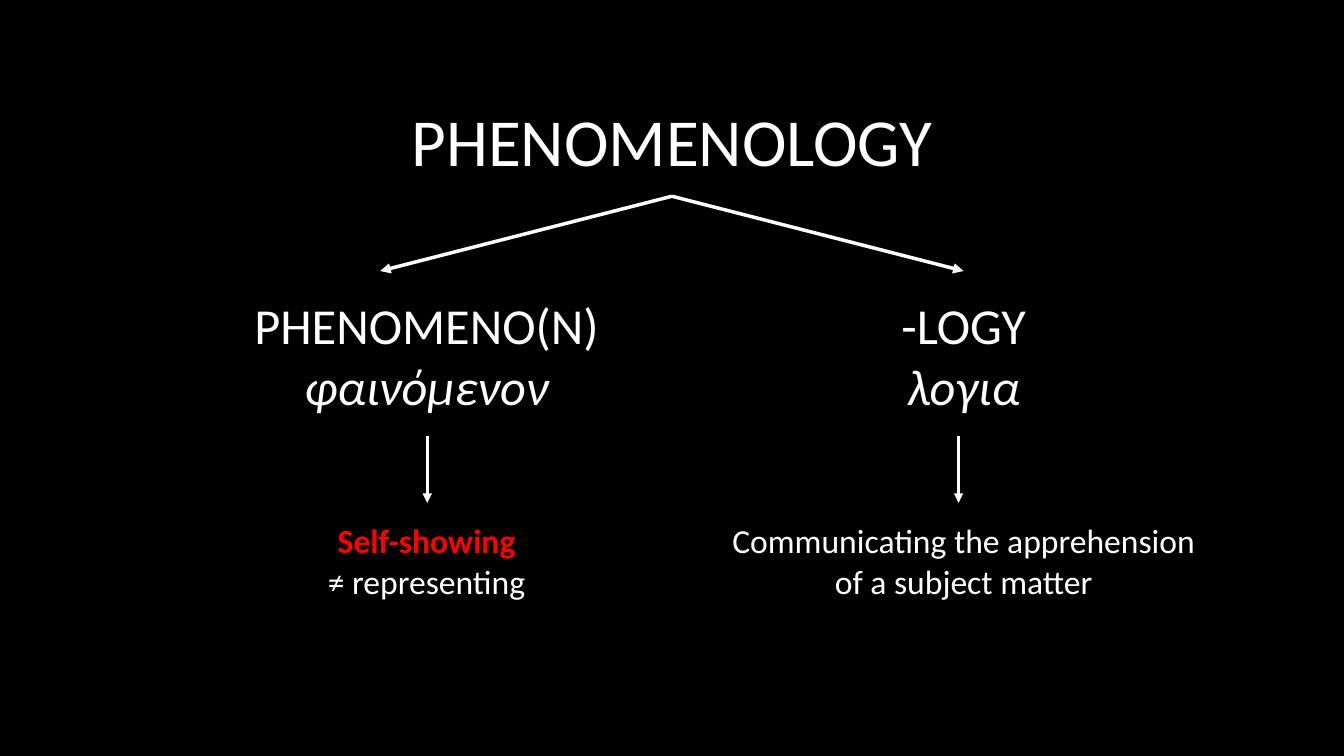
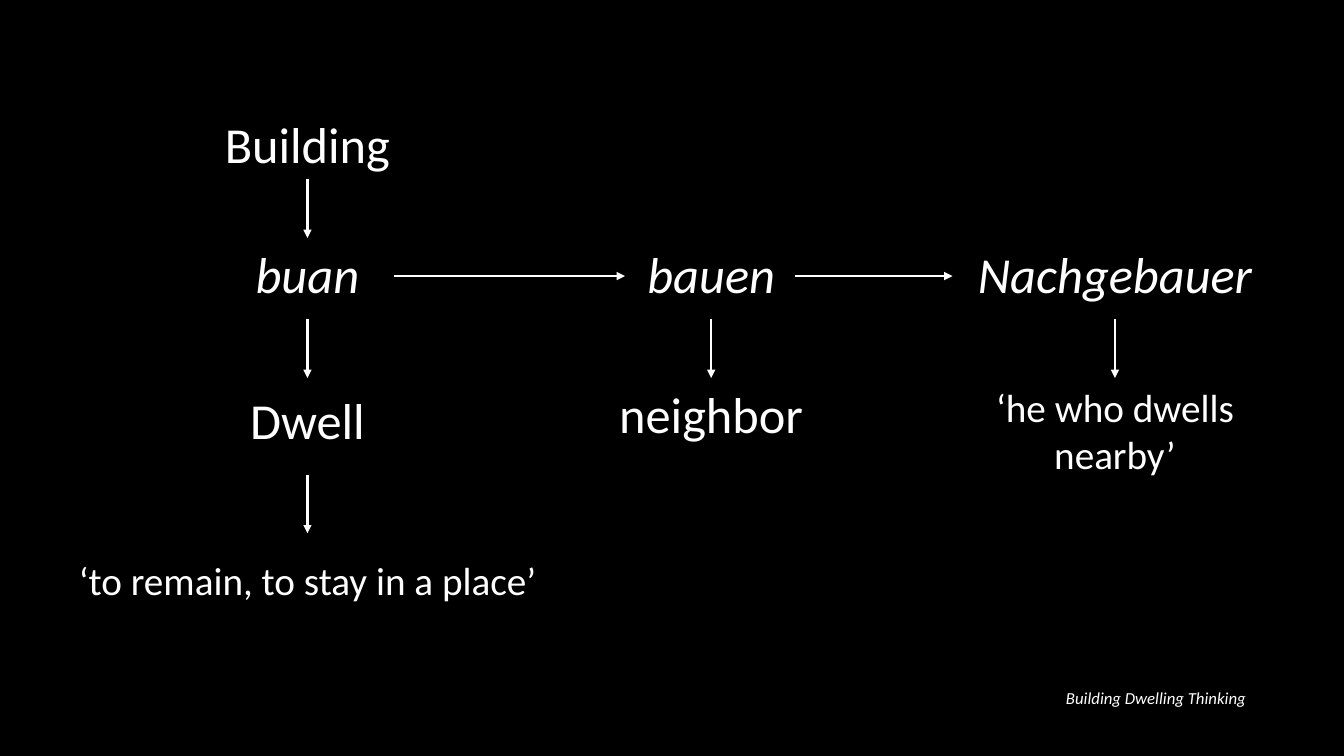
from dataclasses import dataclass

from lxml import etree
from pptx import Presentation
from pptx.dml.color import RGBColor
from pptx.enum.shapes import MSO_CONNECTOR
from pptx.enum.text import MSO_ANCHOR, MSO_AUTO_SIZE, PP_ALIGN
from pptx.oxml.ns import qn
from pptx.shapes.autoshape import Shape
from pptx.slide import Slide
from pptx.util import Pt

STRAIGHT = MSO_CONNECTOR.STRAIGHT
TOP_ANCHOR = MSO_ANCHOR.TOP
FIT_SHAPE = MSO_AUTO_SIZE.SHAPE_TO_FIT_TEXT
CENTER, RIGHT = PP_ALIGN.CENTER, PP_ALIGN.RIGHT
TOP_SIDE, BOTTOM_SIDE = 0, 2
TITLE_ONLY_LAYOUT = 5


@dataclass(frozen=True)
class Theme:
    background: RGBColor = RGBColor(0x00, 0x00, 0x00)
    foreground: RGBColor = RGBColor(0xFF, 0xFF, 0xFF)
    accent: RGBColor = RGBColor(0xFF, 0x00, 0x00)
    font: str = "Calibri"
    title: int = 48
    term: int = 36
    meaning: int = 28
    gloss: int = 24
    source: int = 12


THEME = Theme()


@dataclass(frozen=True)
class Line:
    text: str
    italic: bool = False
    bold: bool = False
    color: RGBColor = THEME.foreground


@dataclass(frozen=True)
class Label:
    """Text box placed by its horizontal centre; lengths in points."""
    name: str
    center: float
    top: float
    width: float
    height: float
    size: int
    lines: tuple[Line, ...]
    alignment: PP_ALIGN = CENTER
    wrap: bool = True
    is_title: bool = False


@dataclass(frozen=True)
class Arrow:
    """Arrow in points, optionally joined to labels by name."""
    start: tuple[float, float]
    end: tuple[float, float]
    weight: float
    from_label: str = ""
    to_label: str = ""


# Shared drawing functions
def draw_label(slide: Slide, label: Label) -> Shape:
    box = (Pt(label.center - label.width / 2), Pt(label.top),
           Pt(label.width), Pt(label.height))
    if label.is_title:
        shape = slide.shapes.title
        shape.left, shape.top, shape.width, shape.height = box
    else:
        shape = slide.shapes.add_textbox(*box)
    frame = shape.text_frame
    frame.word_wrap = label.wrap
    frame.auto_size = FIT_SHAPE
    frame.vertical_anchor = TOP_ANCHOR
    for index, line in enumerate(label.lines):
        paragraph = frame.add_paragraph() if index else frame.paragraphs[0]
        paragraph.text = line.text
        paragraph.alignment = label.alignment
        font = paragraph.font
        font.name, font.size = THEME.font, Pt(label.size)
        font.italic, font.bold = line.italic, line.bold
        font.color.rgb = line.color
    return shape


def draw_arrow(slide: Slide, arrow: Arrow, shapes: dict[str, Shape]) -> None:
    connector = slide.shapes.add_connector(
        STRAIGHT, *(Pt(value) for value in arrow.start + arrow.end))
    if arrow.from_label:
        connector.begin_connect(shapes[arrow.from_label], BOTTOM_SIDE)
    if arrow.to_label:
        connector.end_connect(shapes[arrow.to_label], TOP_SIDE)
    connector.line.color.rgb = THEME.foreground
    connector.line.width = Pt(arrow.weight)
    properties = connector.line._get_or_add_ln()
    etree.SubElement(properties, qn("a:tailEnd"), type="triangle")
    etree.SubElement(connector._element.spPr, qn("a:effectLst"))


def draw_diagram(presentation: Presentation, labels: list[Label],
                 arrows: list[Arrow]) -> None:
    slide = presentation.slides.add_slide(
        presentation.slide_layouts[TITLE_ONLY_LAYOUT])
    shapes = {label.name: draw_label(slide, label) for label in labels}
    for arrow in arrows:
        draw_arrow(slide, arrow, shapes)


# Slide 1: the word split into its two roots
def add_phenomenology(presentation: Presentation) -> None:
    middle, left, right = 480, 304.7, 688.3
    width = 351.4

    def root(name: str, center: float, latin: str, greek: str) -> Label:
        return Label(name, center, 206.6, width, 94.5, THEME.term,
                     (Line(latin), Line(greek, italic=True)))

    def gloss(name: str, center: float, *lines: Line) -> Label:
        return Label(name, center, 368, width, 65.4, THEME.gloss, lines)

    labels = [
        Label("title", middle, 67.7, 656.6, 65.4, THEME.title,
              (Line("PHENOMENOLOGY"),), is_title=True),
        root("phenomenon", left, "PHENOMENO(N)", "φαινόμενον"),
        root("logy", right, "-LOGY", "λογια"),
        gloss("showing", left,
              Line("Self-showing", bold=True, color=THEME.accent),
              Line("≠ representing")),
        gloss("communicating", right,
              Line("Communicating the apprehension of a subject matter")),
    ]
    branches = [Arrow((middle, 140.2), (x, 193.6), 2.5)
                for x in (right, 271.6)]
    drops = [Arrow((x, 311.2), (x, 359.2), 2.25) for x in (left + 0.5, 684.7)]
    draw_diagram(presentation, labels, branches + drops)


# Slide 2: the family of words around "Building"
def add_building(presentation: Presentation) -> None:
    first, second, third = (219.6 + 288.4 * column for column in range(3))
    term_row, lower_row, drop = 170, 270, 41.8
    weight = 1.75

    def term(text: str, center: float, top: float, italic: bool = False,
             is_title: bool = False) -> Label:
        return Label(text, center, top, 213.2, 51, THEME.term,
                     (Line(text, italic),), is_title=is_title)

    def meaning(name: str, center: float, top: float, width: float,
                height: float, text: str) -> Label:
        return Label(name, center, top, width, height, THEME.meaning,
                     (Line(text),))

    def down(center: float, top: float, from_label: str = "",
             to_label: str = "") -> Arrow:
        return Arrow((center, top), (center, top + drop), weight,
                     from_label, to_label)

    def across(start: float, end: float) -> Arrow:
        return Arrow((start, 197.2), (end, 197.2), weight)

    labels = [
        Label("source", 825.2, 487.4, 144, 21.8, THEME.source,
              (Line("Building Dwelling Thinking", italic=True),),
              alignment=RIGHT, wrap=False),
        term("Building", first, 77.2, is_title=True),
        term("buan", first, term_row, italic=True),
        term("Dwell", first, 274.4),
        meaning("remain", first, 393.8, 384.4, 41.2,
                "‘to remain, to stay in a place’"),
        term("bauen", second, term_row, italic=True),
        term("neighbor", second, lower_row),
        term("Nachgebauer", third, term_row, italic=True),
        meaning("nearby", third, lower_row, 213.2, 75,
                "‘he who dwells nearby’"),
    ]
    arrows = [
        across(281.4, 446.4),
        across(568, 680.4),
        down(first, 128.2, "Building", "buan"),
        down(first, lower_row - drop),
        down(first, 339.2),
        down(second, lower_row - drop, to_label="neighbor"),
        down(third, lower_row - drop, to_label="nearby"),
    ]
    draw_diagram(presentation, labels, arrows)


def main() -> None:
    presentation = Presentation()
    presentation.slide_width, presentation.slide_height = Pt(960), Pt(540)
    background = presentation.slide_master.background.fill
    background.solid()
    background.fore_color.rgb = THEME.background
    add_phenomenology(presentation)
    add_building(presentation)
    presentation.save("out.pptx")


if __name__ == "__main__":
    main()
